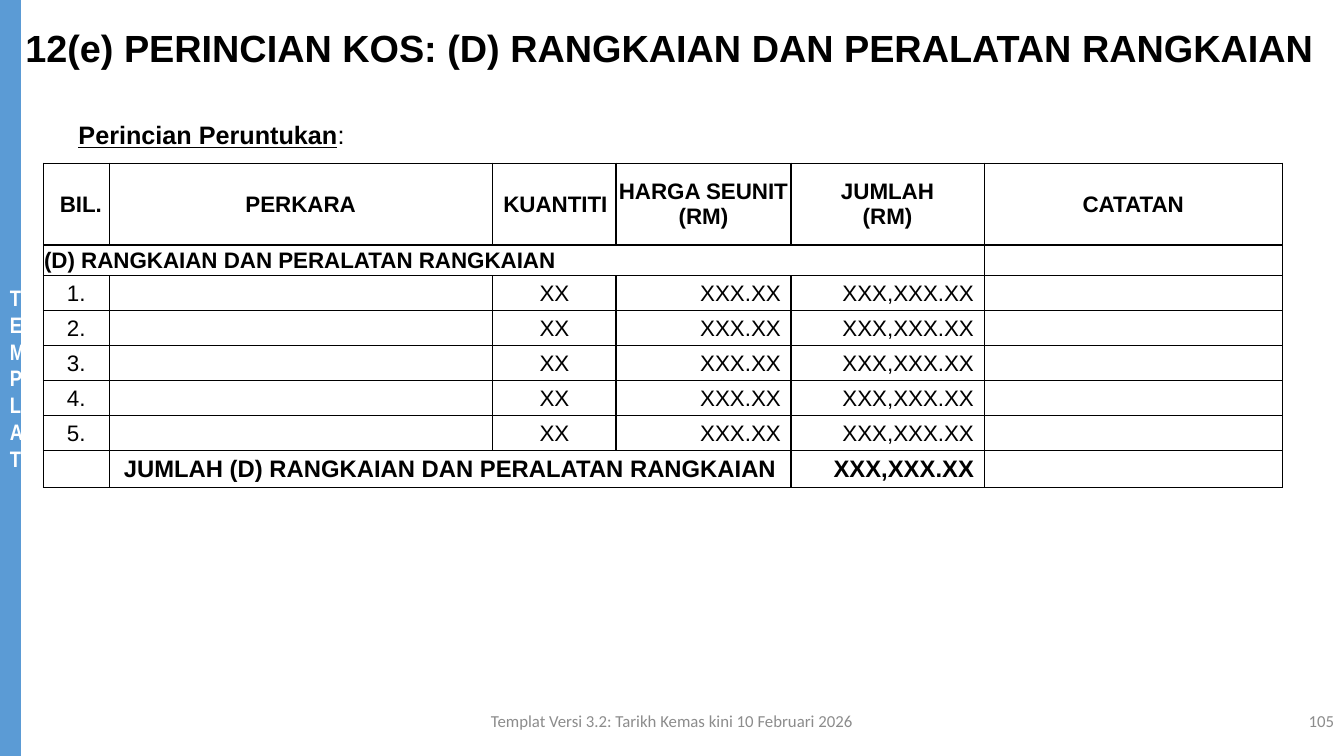
"""Builds the cost breakdown slide for network and network equipment."""
import dataclasses

import lxml.etree
import pptx
import pptx.dml.color
import pptx.enum.shapes
import pptx.enum.text
import pptx.oxml.ns
import pptx.util

Pt = pptx.util.Pt
Align = pptx.enum.text.PP_ALIGN
MIDDLE = pptx.enum.text.MSO_ANCHOR.MIDDLE
TOP = pptx.enum.text.MSO_ANCHOR.TOP


@dataclasses.dataclass(frozen=True)
class Theme:
    ink: str = "000000"
    white: str = "FFFFFF"
    grey: str = "8C8C8C"
    blue: str = "5B9BD5"
    face: str = "Arial"
    slim: str = "Arial Narrow"
    foot: str = "Calibri"
    title: int = 27
    lead: int = 18
    total: int = 17
    body: int = 16
    small: int = 12


class Page:
    def __init__(self, slide, theme):
        self.slide = slide
        self.theme = theme

    def style(self, font, size, face=None, color=None, bold=False):
        font.size = Pt(size)
        font.name = face or self.theme.face
        font.bold = bold
        font.color.rgb = pptx.dml.color.RGBColor.from_string(color or self.theme.ink)

    def text(self, box, words, size, align=Align.LEFT, anchor=TOP, **look):
        frame = self.slide.shapes.add_textbox(*map(Pt, box)).text_frame
        frame.word_wrap = True
        frame.vertical_anchor = anchor
        line = frame.paragraphs[0]
        line.text = words
        line.alignment = align
        self.style(line.font, size, **look)
        return line

    def bar(self, box, words):
        shape = self.slide.shapes.add_shape(
            pptx.enum.shapes.MSO_SHAPE.RECTANGLE, *map(Pt, box))
        shape.shadow.inherit = False
        shape.fill.solid()
        shape.fill.fore_color.rgb = pptx.dml.color.RGBColor.from_string(self.theme.blue)
        shape.line.fill.background()
        frame = shape.text_frame
        frame.word_wrap = True
        frame.vertical_anchor = MIDDLE
        line = frame.paragraphs[0]
        line.text = words
        line.alignment = Align.CENTER
        self.style(line.font, self.theme.body, self.theme.slim, self.theme.white, True)

    def grid(self, left, top, widths, heights):
        table = self.slide.shapes.add_table(
            len(heights), len(widths), Pt(left), Pt(top),
            Pt(sum(widths)), Pt(sum(heights))).table
        table.first_row = table.horz_banding = False
        for col, width in zip(table.columns, widths):
            col.width = Pt(width)
        for row, height in zip(table.rows, heights):
            row.height = Pt(height)
        for cell in table.iter_cells():
            cell.fill.background()
            self.border(cell)
            self.cell(cell, "")
        return table

    def border(self, cell):
        qn = pptx.oxml.ns.qn
        props = cell._tc.get_or_add_tcPr()
        for spot, side in enumerate(("lnL", "lnR", "lnT", "lnB")):
            edge = lxml.etree.Element(qn("a:" + side), w=str(Pt(1)))
            fill = lxml.etree.SubElement(edge, qn("a:solidFill"))
            lxml.etree.SubElement(fill, qn("a:srgbClr"), val=self.theme.ink)
            props.insert(spot, edge)

    def cell(self, cell, words, align=Align.CENTER, bold=False, size=None,
             left=0.5, right=0.5):
        cell.vertical_anchor = MIDDLE
        cell.margin_left, cell.margin_right = Pt(left), Pt(right)
        cell.margin_top, cell.margin_bottom = Pt(0.5), Pt(0)
        cell.text = words
        for line in cell.text_frame.paragraphs:
            line.alignment = align
            self.style(line.font, size or self.theme.body, bold=bold)


def main():
    deck = pptx.Presentation()
    deck.slide_width, deck.slide_height = Pt(960), Pt(540)
    theme = Theme()
    page = Page(deck.slides.add_slide(deck.slide_layouts[6]), theme)

    page.bar((0, 0, 15, 540), "TEMPLAT")
    group = "RANGKAIAN DAN PERALATAN RANGKAIAN"

    count = 5
    table = page.grid(31, 116.5, (47, 274, 88, 125, 138, 213),
                      (58.5, 22, *[25] * count, 26.5))
    heads = (("BIL.", 7), ("PERKARA", 0), ("KUANTITI", 2),
             ("HARGA SEUNIT\n(RM)", 0.5), ("JUMLAH\n(RM)", 0.5), ("CATATAN", 0.5))
    for col, (head, left) in enumerate(heads):
        page.cell(table.cell(0, col), head, bold=True, left=left)

    table.cell(1, 0).merge(table.cell(1, 4))
    page.cell(table.cell(1, 0), f"(D) {group}", Align.LEFT, bold=True)

    for item in range(1, count + 1):
        row = item + 1
        page.cell(table.cell(row, 0), f"{item}.")
        page.cell(table.cell(row, 2), "XX")
        page.cell(table.cell(row, 3), "XXX.XX", Align.RIGHT, right=7.2)
        page.cell(table.cell(row, 4), "XXX,XXX.XX", Align.RIGHT, right=7.2)

    last = count + 2
    table.cell(last, 1).merge(table.cell(last, 3))
    page.cell(table.cell(last, 1), f"JUMLAH (D) {group}", bold=True, size=theme.total)
    page.cell(table.cell(last, 4), "XXX,XXX.XX", Align.RIGHT, True, theme.total, right=7.2)

    lead = page.text((49, 82, 601, 29), "Perincian Peruntukan", theme.lead)
    lead.runs[0].font.bold = lead.runs[0].font.underline = True
    lead.add_run().text = ":"
    page.text((11, 14, 949, 58), f"12(e) PERINCIAN KOS: (D) {group}", theme.title, bold=True)

    note = dict(size=theme.small, anchor=MIDDLE, face=theme.foot, color=theme.grey)
    page.text((744, 500.5, 216, 29), "105", align=Align.RIGHT, **note)
    page.text((318, 500.5, 324, 29),
              "Templat Versi 3.2: Tarikh Kemas kini 10 Februari 2026",
              align=Align.CENTER, **note)
    deck.save("out.pptx")


if __name__ == "__main__":
    main()
